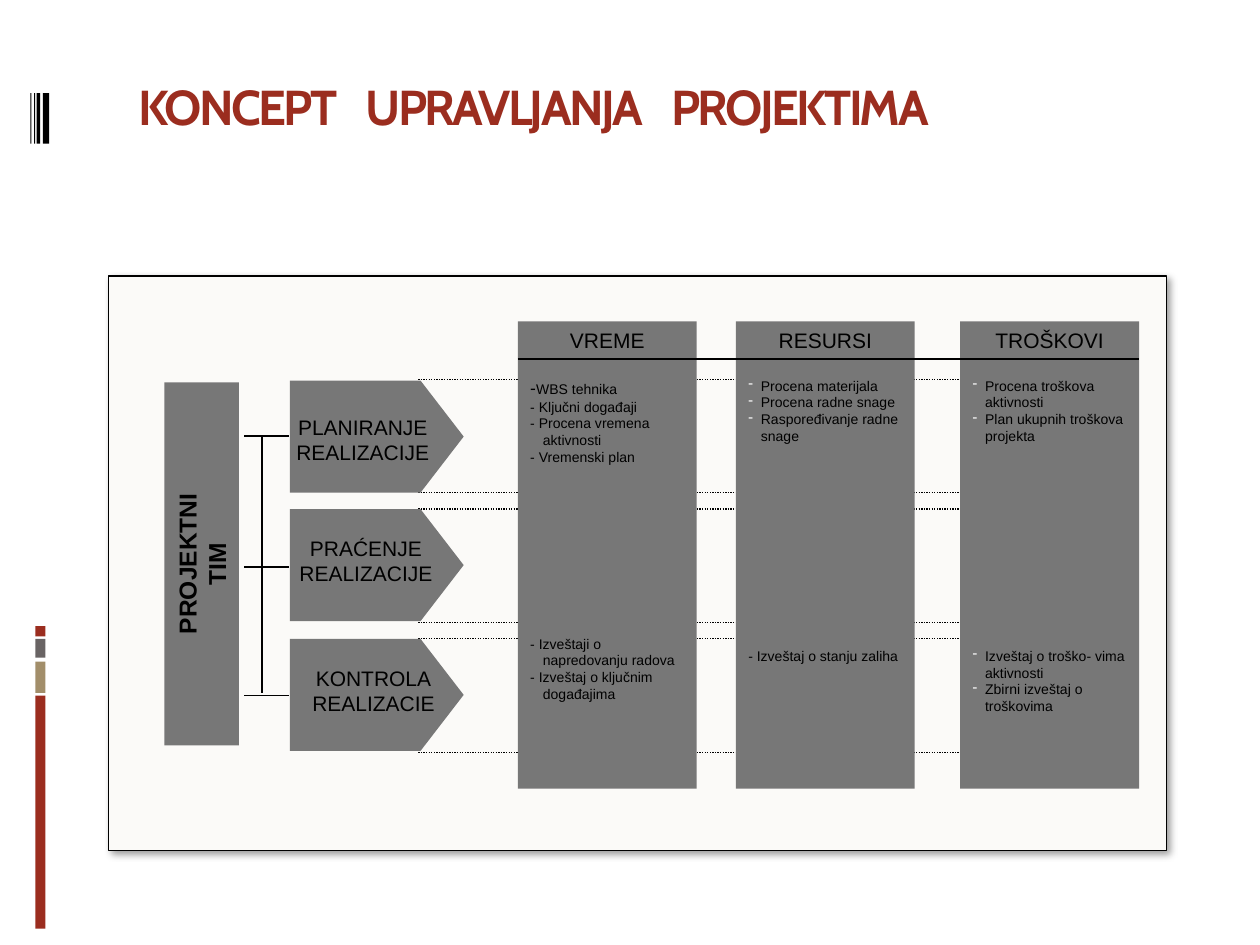
from lxml import etree
from pptx import Presentation
from pptx.dml.color import RGBColor
from pptx.enum.dml import MSO_LINE
from pptx.enum.shapes import MSO_CONNECTOR, MSO_SHAPE
from pptx.enum.text import MSO_ANCHOR, PP_ALIGN
from pptx.oxml import parse_xml
from pptx.oxml.ns import nsdecls, qn
from pptx.util import Inches, Pt

RECTANGLE = MSO_SHAPE.RECTANGLE
PENTAGON = MSO_SHAPE.PENTAGON
STRAIGHT = MSO_CONNECTOR.STRAIGHT
DOTTED = MSO_LINE.ROUND_DOT
TOP = MSO_ANCHOR.TOP
MIDDLE = MSO_ANCHOR.MIDDLE
LEFT = PP_ALIGN.LEFT
CENTER = PP_ALIGN.CENTER

RED = RGBColor(0x9B, 0x2D, 0x1F)
TAN = RGBColor(0xA2, 0x8E, 0x6A)
DARK_GRAY = RGBColor(0x69, 0x64, 0x64)
BLOCK_GRAY = RGBColor(0x77, 0x77, 0x77)
PANEL = RGBColor(0xFB, 0xFA, 0xF8)
BLACK = RGBColor(0, 0, 0)

presentation = Presentation()
presentation.slide_width = Inches(10)
presentation.slide_height = Inches(7.5)
slide = presentation.slides.add_slide(presentation.slide_layouts[6])


def add_block(kind, left, top, width, height, color):
    shape = slide.shapes.add_shape(
        kind, Inches(left), Inches(top), Inches(width), Inches(height)
    )
    shape.shadow.inherit = False
    shape.fill.solid()
    shape.fill.fore_color.rgb = color
    shape.line.fill.background()
    return shape


def write_line(paragraph, text, size, alignment=CENTER, bold=False):
    paragraph.alignment = alignment
    run = paragraph.add_run()
    run.text = text
    run.font.name = "Arial"
    run.font.size = Pt(size)
    run.font.bold = bold
    run.font.color.rgb = BLACK


for top, height, color in [
    (5.52, 1.85, RED), (5.25, 0.25, TAN), (5.07, 0.15, DARK_GRAY), (4.97, 0.08, RED)
]:
    add_block(RECTANGLE, 0.28, top, 0.08, height, color)
for left, width in [(0.34, 0.05), (0.29, 0.03), (0.27, 0.01), (0.24, 0.01)]:
    add_block(RECTANGLE, left, 0.74, width, 0.4, BLACK)

title = slide.shapes.add_textbox(Inches(1), Inches(0.56), Inches(8.5), Inches(1))
title.text_frame.word_wrap = True
title.text_frame.vertical_anchor = TOP
title_paragraph = title.text_frame.paragraphs[0]
for text, spacing in [
    ("KONCEPT", -150), (" ", 1000), ("UPRAVLJANJA", -150), (" ", 1000), ("PROJEKTIMA", -150)
]:
    run = title_paragraph.add_run()
    run.text = text
    run.font.name = "Cabin"
    run.font.size = Pt(28)
    run.font.bold = True
    run.font.color.rgb = RED
    run.font._element.set("spc", str(spacing))

panel = add_block(RECTANGLE, 0.86, 2.19, 8.4, 4.56, PANEL)
panel.line.color.rgb = BLACK
panel.line.width = Pt(0.75)
panel_properties = panel._element.spPr
panel_properties.remove(panel_properties.find(qn("a:effectLst")))
panel_properties.append(parse_xml(
    f'<a:effectLst {nsdecls("a")}>'
    '<a:outerShdw blurRad="50800" dist="38100" dir="2700000" algn="tl" rotWithShape="0">'
    '<a:srgbClr val="000000"><a:alpha val="40000"/></a:srgbClr>'
    '</a:outerShdw></a:effectLst>'
))

guides = [(3.32, y, 9.01, y, DOTTED) for y in (3.01, 3.91, 4.04, 4.94, 5.07, 5.97)]
branches = [(1.94, y, 2.29, y, None) for y in (3.46, 4.5, 5.52)]
header_rule = (4.11, 2.85, 9.04, 2.85, None)
trunk = (2.08, 3.46, 2.08, 5.5, None)
lines = [header_rule, trunk] + branches


team = add_block(RECTANGLE, 0.16, 4.18, 2.88, 0.59, BLOCK_GRAY)
team.rotation = 270
team.text_frame.vertical_anchor = MIDDLE
write_line(team.text_frame.paragraphs[0], "PROJEKTNI", 14, bold=True)
write_line(team.text_frame.add_paragraph(), "TIM", 14, bold=True)

phases = [
    (3.02, 2.13, 3.24, 1.5, "PLANIRANJE", "REALIZACIJE"),
    (4.04, 2.17, 4.2, 1.47, "PRAĆENJE", "REALIZACIJE"),
    (5.07, 2.26, 5.23, 1.41, "KONTROLA", "REALIZACIE"),
]
columns = [
    (4.11, "VREME", False, 97,
     ["-WBS tehnika", "- Ključni događaji", "- Procena vremena aktivnosti", "- Vremenski plan"],
     ["- Izveštaji o napredovanju radova", "- Izveštaj o ključnim događajima"]),
    (5.84, "RESURSI", True, 116,
     ["Procena materijala", "Procena radne snage", "Raspoređivanje radne snage"],
     ["- Izveštaj o stanju zaliha"]),
    (7.62, "TROŠKOVI", True, 116,
     ["Procena troškova aktivnosti", "Plan ukupnih troškova projekta"],
     ["Izveštaj o troško- vima aktivnosti", "Zbirni izveštaj o troškovima"]),
]

connectors = []
for x1, y1, x2, y2, dash in guides + lines:
    connector = slide.shapes.add_connector(
        STRAIGHT, Inches(x1), Inches(y1), Inches(x2), Inches(y2)
    )
    connector.line.color.rgb = BLACK
    connector.line.width = Pt(0.75)
    if dash:
        connector.line.dash_style = dash
    else:
        connectors.append(connector)
    etree.SubElement(connector._element.spPr, qn("a:effectLst"))

for top, label_left, label_top, label_width, first, second in phases:
    arrow = add_block(PENTAGON, 2.3, top, 1.38, 0.89, BLOCK_GRAY)
    arrow.adjustments[0] = 0.385
    label = slide.shapes.add_textbox(
        Inches(label_left), Inches(label_top), Inches(label_width), Inches(0.6)
    )
    label.text_frame.word_wrap = True
    write_line(label.text_frame.paragraphs[0], first, 12)
    write_line(label.text_frame.add_paragraph(), second, 12)

for left, heading, bulleted, gap, planning, control in columns:
    column = add_block(RECTANGLE, left, 2.55, 1.42, 3.71, BLOCK_GRAY)
    frame = column.text_frame
    frame.word_wrap = True
    frame.vertical_anchor = TOP
    write_line(frame.paragraphs[0], heading, 12)
    for items, space in [(planning, 14), (control, gap)]:
        for index, item in enumerate(items):
            paragraph = frame.add_paragraph()
            if index == 0:
                paragraph.space_before = Pt(space)
            if item == "-WBS tehnika":
                write_line(paragraph, "-", 10, LEFT)
                item = item[1:]
            write_line(paragraph, item, 8, LEFT)
            properties = paragraph._element.get_or_add_pPr()
            properties.set("marL", str(Inches(0.1)))
            properties.set("indent", str(Inches(-0.1)))
            if bulleted and not item.startswith("-"):
                bullet_color = etree.SubElement(properties, qn("a:buClr"))
                etree.SubElement(bullet_color, qn("a:srgbClr"), val="FFFFFF")
                etree.SubElement(properties, qn("a:buChar"), char="-")

for connector in connectors:
    slide.shapes._spTree.append(connector._element)

presentation.save("out.pptx")
